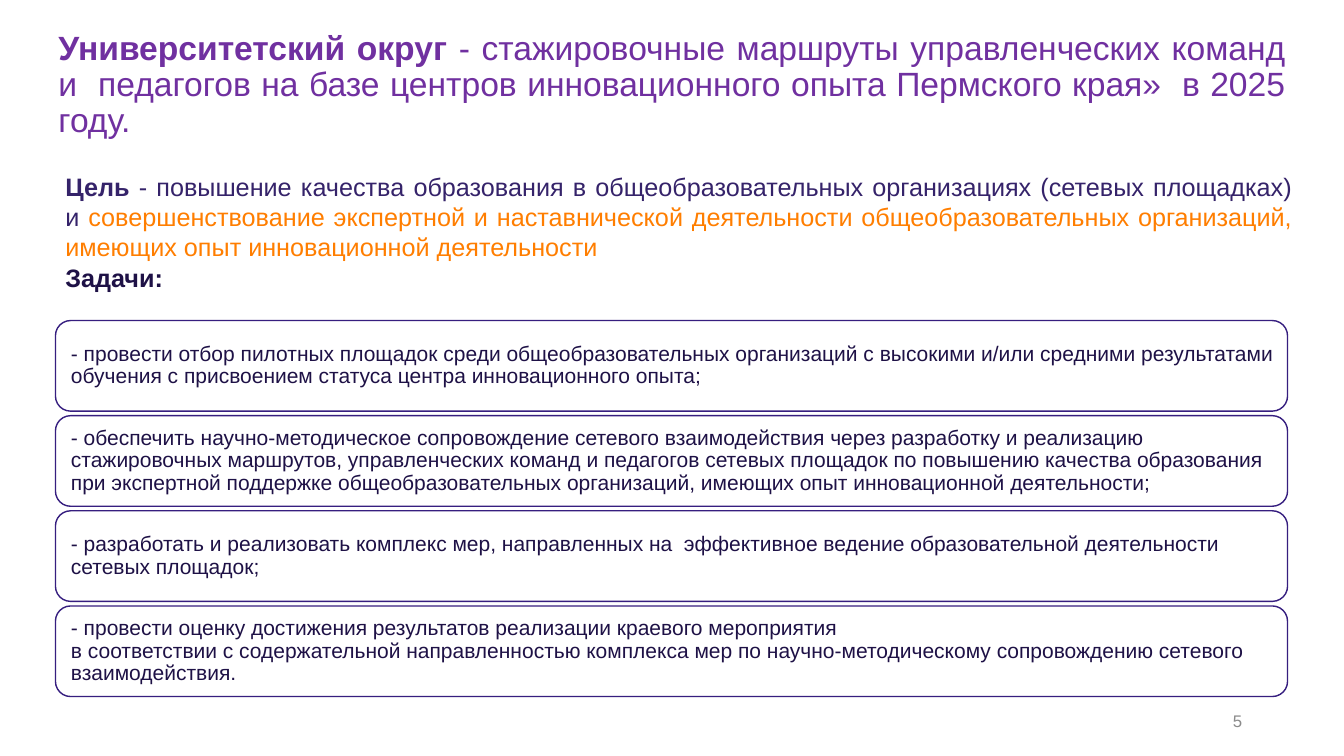
from pptx import Presentation
from pptx.dml.color import RGBColor
from pptx.enum.shapes import MSO_SHAPE
from pptx.enum.text import MSO_ANCHOR, MSO_AUTO_SIZE, PP_ALIGN
from pptx.util import Inches, Pt

COLORS = {
    "title": "7030A0",
    "goal": "35236A",
    "accent": "FF7E00",
    "task": "1E1146",
    "border": "361E7F",
    "box": "FFFFFF",
    "number": "8B8B8B",
}
FONT = "Arial"

TITLE = [
    ("Университетский округ ", "title", True),
    ("- стажировочные маршруты управленческих команд и  педагогов на базе "
     "центров инновационного опыта Пермского края»  в 2025 году.", "title", False),
]
GOAL = [
    ("Цель", "goal", True),
    (" - повышение качества образования в общеобразовательных организациях "
     "(сетевых площадках) и ", "goal", False),
    ("совершенствование экспертной и наставнической деятельности "
     "общеобразовательных организаций, имеющих опыт инновационной деятельности",
     "accent", False),
]
TASKS_HEADING = [("Задачи:", "task", True)]
TASKS = [
    "- провести отбор пилотных площадок среди общеобразовательных организаций с "
    "высокими и/или средними результатами обучения с присвоением статуса центра "
    "инновационного опыта;",
    "- обеспечить научно-методическое сопровождение сетевого взаимодействия через "
    "разработку и реализацию стажировочных маршрутов, управленческих команд и "
    "педагогов сетевых площадок по повышению качества образования при экспертной "
    "поддержке общеобразовательных организаций, имеющих опыт инновационной "
    "деятельности;",
    "- разработать и реализовать комплекс мер, направленных на  эффективное ведение "
    "образовательной деятельности сетевых площадок;",
    "- провести оценку достижения результатов реализации краевого мероприятия\n"
    "в соответствии с содержательной направленностью комплекса мер по "
    "научно-методическому сопровождению сетевого взаимодействия.",
]


def rgb(name):
    return RGBColor.from_string(COLORS[name])


def add_runs(p, runs, size, align):
    p.alignment = align
    for text, color, bold in runs:
        for i, line in enumerate(text.split("\n")):
            if i:
                p.add_line_break()
            r = p.add_run()
            r.text = line
            r.font.name, r.font.size, r.font.bold = FONT, Pt(size), bold
            r.font.color.rgb = rgb(color)


def setup_frame(shape, anchor, left=0.1, top=0.05, right=0.1, bottom=0.05):
    tf = shape.text_frame
    tf.word_wrap = True
    tf.auto_size = MSO_AUTO_SIZE.NONE
    tf.vertical_anchor = anchor
    tf.margin_left, tf.margin_top = Inches(left), Inches(top)
    tf.margin_right, tf.margin_bottom = Inches(right), Inches(bottom)
    return tf


def add_title(s, x, y, w, h):
    title = s.shapes.title
    title.left, title.top, title.width, title.height = map(Inches, (x, y, w, h))
    p = setup_frame(title, MSO_ANCHOR.TOP).paragraphs[0]
    p.line_spacing = 0.9
    add_runs(p, TITLE, 24, PP_ALIGN.JUSTIFY)


def add_goal(s, x, y, w, h):
    box = s.shapes.add_textbox(*map(Inches, (x, y, w, h)))
    tf = setup_frame(box, MSO_ANCHOR.TOP)
    add_runs(tf.paragraphs[0], GOAL, 18, PP_ALIGN.JUSTIFY)
    add_runs(tf.add_paragraph(), TASKS_HEADING, 18, PP_ALIGN.JUSTIFY)


def add_tasks(s, x, y, w, h, gap=0.045):
    """Stack equal rounded boxes, one per task, to fill the given box."""
    row = (h - gap * (len(TASKS) - 1)) / len(TASKS)
    for i, task in enumerate(TASKS):
        box = s.shapes.add_shape(
            MSO_SHAPE.ROUNDED_RECTANGLE,
            *map(Inches, (x, y + i * (row + gap), w, row)))
        box.adjustments[0] = 0.167
        box.shadow.inherit = False
        box.fill.solid()
        box.fill.fore_color.rgb = rgb("box")
        box.line.color.rgb = rgb("border")
        box.line.width = Pt(1)
        tf = setup_frame(box, MSO_ANCHOR.MIDDLE, 0.11, 0.11, 0.06, 0.11)
        p = tf.paragraphs[0]
        p.line_spacing, p.space_after = 0.9, Pt(5.2)
        add_runs(p, [(task, "task", False)], 15, PP_ALIGN.LEFT)


def add_number(s, x, y, w, h):
    box = s.shapes.add_textbox(*map(Inches, (x, y, w, h)))
    p = setup_frame(box, MSO_ANCHOR.MIDDLE).paragraphs[0]
    add_runs(p, [("5", "number", False)], 12, PP_ALIGN.RIGHT)


def main():
    prs = Presentation()
    prs.slide_width, prs.slide_height = Inches(13.33), Inches(7.5)
    s = prs.slides.add_slide(prs.slide_layouts[5])
    # Heading
    add_title(s, 0.48, 0.26, 12.37, 1.22)
    # Goal and the heading of the tasks
    add_goal(s, 0.55, 1.65, 12.37, 2.2)
    # Task boxes
    add_tasks(s, 0.55, 3.18, 12.22, 3.73)
    # Slide number
    add_number(s, 9.42, 6.95, 3, 0.4)
    prs.save("out.pptx")


if __name__ == "__main__":
    main()
